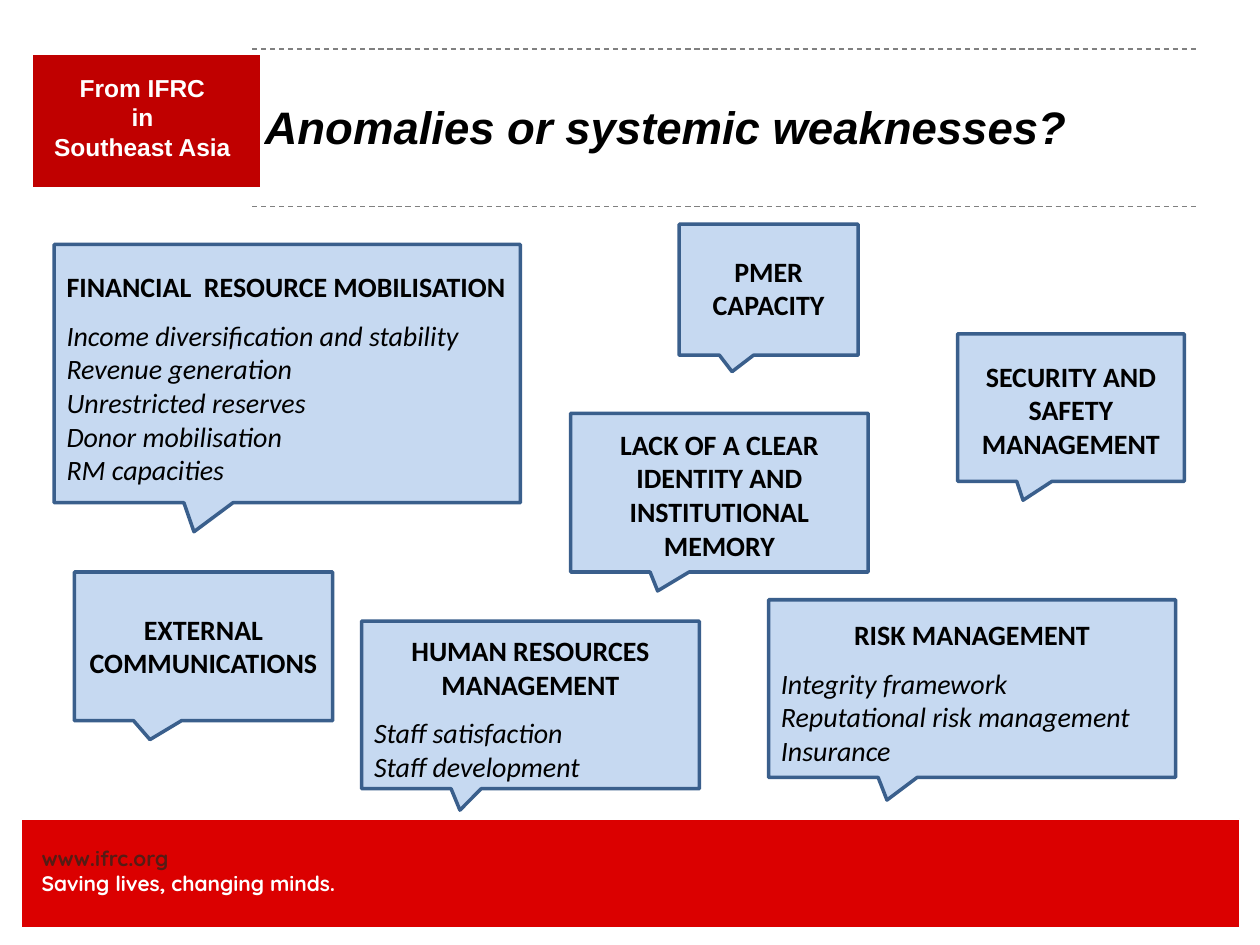
from lxml.etree import SubElement
from pptx import Presentation
from pptx.dml.color import RGBColor
from pptx.enum.dml import MSO_LINE
from pptx.enum.shapes import MSO_CONNECTOR, MSO_SHAPE
from pptx.enum.text import MSO_ANCHOR, MSO_AUTO_SIZE, PP_ALIGN
from pptx.oxml.ns import qn
from pptx.util import Inches, Pt

BLACK = RGBColor(0x00, 0x00, 0x00)
WHITE = RGBColor(0xFF, 0xFF, 0xFF)
FOOTER_RED = RGBColor(0xDB, 0x00, 0x00)
LABEL_RED = RGBColor(0xC0, 0x00, 0x00)
BROWN = RGBColor(0x55, 0x1C, 0x15)
GREY = RGBColor(0x80, 0x80, 0x80)
PALE_BLUE = RGBColor(0xC6, 0xD9, 0xF1)
STEEL_BLUE = RGBColor(0x3A, 0x5F, 0x8C)

CALLOUTS = [
    ((0.43, 1.94, 4.13, 3.99), (1.46, 1.54, 1.85, 4.22), 0.16,
     "FINANCIAL  RESOURCE MOBILISATION",
     ["Income diversification and stability", "Revenue generation",
      "Unrestricted reserves", "Donor mobilisation", "RM capacities"]),
    ((5.39, 1.78, 6.81, 2.82), (5.71, 5.81, 5.98, 2.95), 0.16,
     "PMER CAPACITY", []),
    ((2.87, 4.93, 5.55, 6.26), (3.58, 3.65, 3.82, 6.43), 0.12,
     "HUMAN RESOURCES MANAGEMENT",
     ["Staff satisfaction", "Staff development"]),
    ((4.53, 3.28, 6.89, 4.54), (5.16, 5.22, 5.47, 4.69), 0.12,
     "LACK OF A CLEAR IDENTITY AND INSTITUTIONAL MEMORY", []),
    ((7.6, 2.65, 9.4, 3.82), (8.07, 8.12, 8.35, 3.97), 0.12,
     "SECURITY AND SAFETY MANAGEMENT", []),
    ((6.1, 4.76, 9.33, 6.17), (6.97, 7.04, 7.28, 6.35), 0.12,
     "RISK MANAGEMENT",
     ["Integrity framework", "Reputational risk management", "Insurance"]),
    ((0.59, 4.54, 2.64, 5.72), (1.06, 1.19, 1.44, 5.87), 0.16,
     "EXTERNAL COMMUNICATIONS", []),
]


class SlideBuilder:
    heading_font = "Arial"
    callout_font = "Calibri"
    footer_font = "Quicksand"

    def __init__(self, slide):
        self.slide = slide

    def add_span(self, para, text, font, size, color, bold=True, italic=False, align=PP_ALIGN.LEFT):
        para.alignment = align
        span = para.add_run()
        span.text = text
        span.font.name = font
        span.font.size = Pt(size)
        span.font.color.rgb = color
        span.font.bold = bold
        span.font.italic = italic

    def next_para(self, frame, index):
        return frame.add_paragraph() if index else frame.paragraphs[0]

    def set_insets(self, frame, left, top, right, bottom):
        frame.margin_left = Inches(left)
        frame.margin_top = Inches(top)
        frame.margin_right = Inches(right)
        frame.margin_bottom = Inches(bottom)

    def paint(self, shape, fill, line, width):
        shape.shadow.inherit = False
        shape.fill.solid()
        shape.fill.fore_color.rgb = fill
        shape.line.color.rgb = line
        shape.line.width = Pt(width)

    def title(self, text, left, top, width, height):
        box = self.slide.shapes.title
        box.left, box.top = Inches(left), Inches(top)
        box.width, box.height = Inches(width), Inches(height)
        frame = box.text_frame
        frame.auto_size = MSO_AUTO_SIZE.NONE
        frame.vertical_anchor = MSO_ANCHOR.MIDDLE
        self.add_span(frame.paragraphs[0], text, self.heading_font, 26, BLACK, italic=True)

    def rectangle(self, left, top, width, height, fill, line_width):
        box = self.slide.shapes.add_shape(
            MSO_SHAPE.RECTANGLE, Inches(left), Inches(top), Inches(width), Inches(height))
        self.paint(box, fill, WHITE, line_width)

    def text_box(self, left, top, width, height, lines, font, size, align, insets):
        box = self.slide.shapes.add_textbox(
            Inches(left), Inches(top), Inches(width), Inches(height))
        frame = box.text_frame
        frame.word_wrap = True
        self.set_insets(frame, *insets)
        for index, (text, color) in enumerate(lines):
            self.add_span(self.next_para(frame, index), text, font, size, color, align=align)

    def dashed_rule(self, left, right, top):
        rule = self.slide.shapes.add_connector(
            MSO_CONNECTOR.STRAIGHT, Inches(left), Inches(top), Inches(right), Inches(top))
        rule.line.color.rgb = GREY
        rule.line.width = Pt(0.75)
        rule.line.dash_style = MSO_LINE.DASH
        SubElement(rule.element.spPr, qn("a:effectLst"))

    def callout(self, body, tail, bottom_inset, heading, details):
        left, top, right, bottom = body
        tail_left, tip, tail_right, tip_bottom = tail
        outline = [(right, top), (right, bottom), (tail_right, bottom),
                   (tip, tip_bottom), (tail_left, bottom), (left, bottom)]
        builder = self.slide.shapes.build_freeform(Inches(left), Inches(top))
        builder.add_line_segments([(Inches(x), Inches(y)) for x, y in outline], close=True)
        box = builder.convert_to_shape()
        self.paint(box, PALE_BLUE, STEEL_BLUE, 2)
        frame = box.text_frame
        frame.word_wrap = True
        frame.vertical_anchor = MSO_ANCHOR.MIDDLE
        self.set_insets(frame, 0.1, 0, 0.1, bottom_inset)
        heading_align = PP_ALIGN.LEFT if len(details) > 3 else PP_ALIGN.CENTER
        self.add_span(frame.paragraphs[0], heading, self.callout_font, 16, BLACK, align=heading_align)
        for index, detail in enumerate(details):
            para = frame.add_paragraph()
            para.space_before = Pt(0 if index else 8.5)
            self.add_span(para, detail, self.callout_font, 16, BLACK, bold=False, italic=True)


def main():
    deck = Presentation()
    deck.slide_width, deck.slide_height = Inches(10), Inches(7.5)
    page = SlideBuilder(deck.slides.add_slide(deck.slide_layouts[5]))

    page.rectangle(0.17, 6.5, 9.67, 0.86, FOOTER_RED, 0.75)
    page.text_box(0.33, 6.71, 3.42, 0.4,
                  [("www.ifrc.org", BROWN), ("Saving lives, changing minds.", WHITE)],
                  page.footer_font, 12, PP_ALIGN.LEFT, (0, 0, 0, 0))
    page.rectangle(0.25, 0.42, 1.83, 1.08, LABEL_RED, 2)
    page.text_box(0.17, 0.53, 1.92, 0.81,
                  [(text, WHITE) for text in ("From IFRC", "in", "Southeast Asia")],
                  page.heading_font, 14, PP_ALIGN.CENTER, (0.1, 0.05, 0.1, 0.05))
    for top in (0.39, 1.64):
        page.dashed_rule(2, 9.5, top)
    page.title("Anomalies or systemic weaknesses?", 2, 0.38, 7.5, 1.25)
    for callout in CALLOUTS:
        page.callout(*callout)

    deck.save("out.pptx")


if __name__ == "__main__":
    main()
